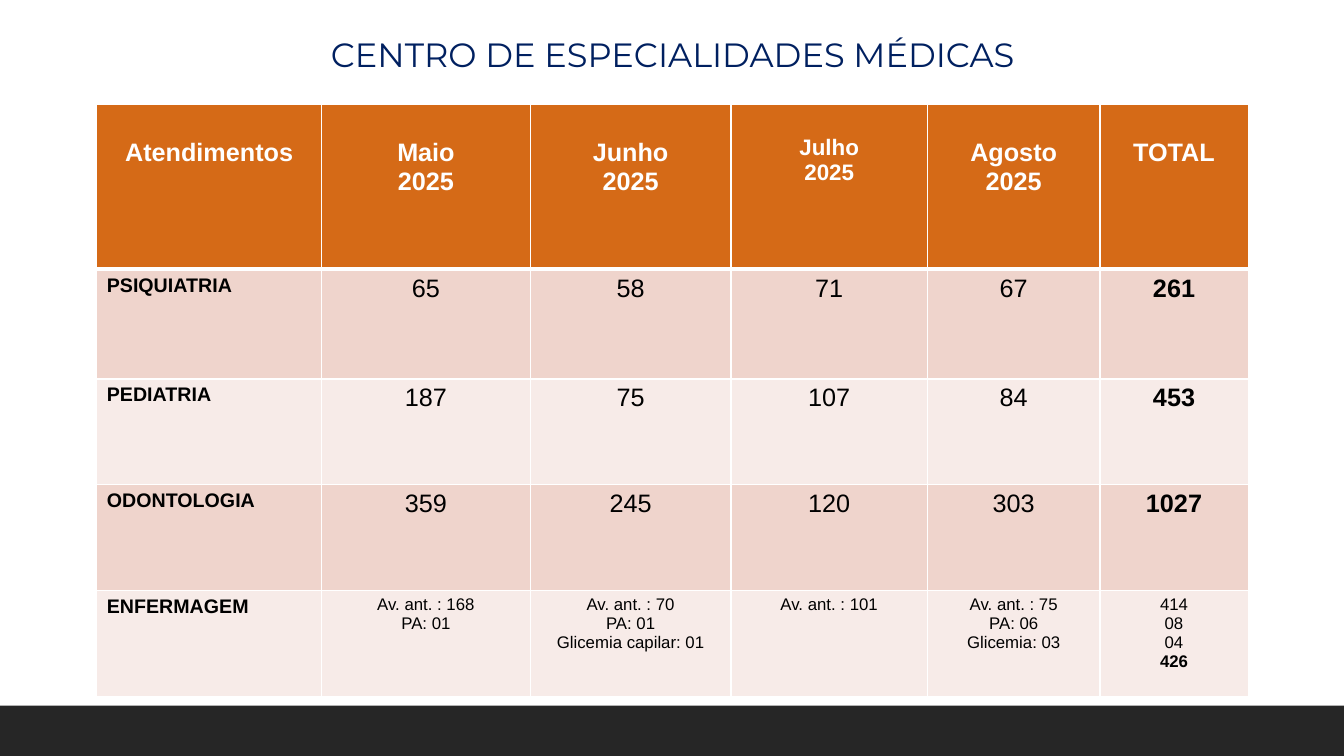
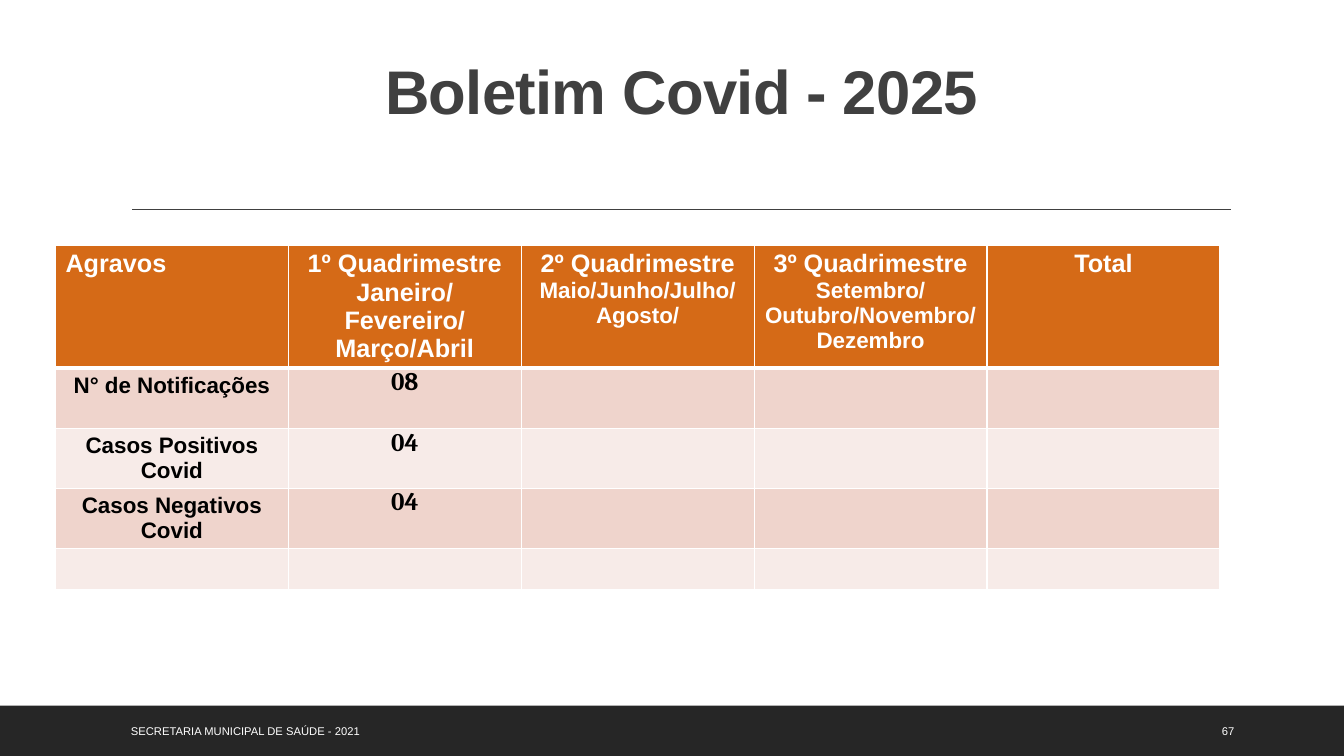
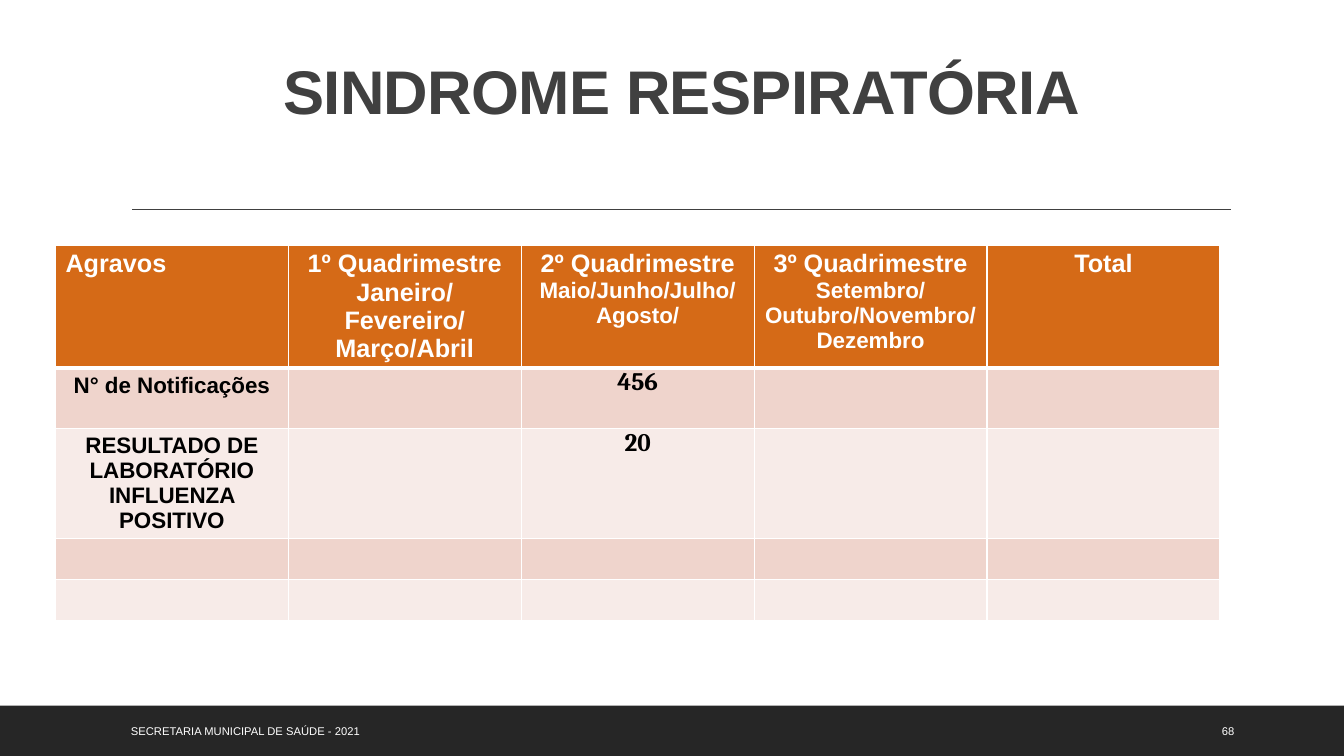
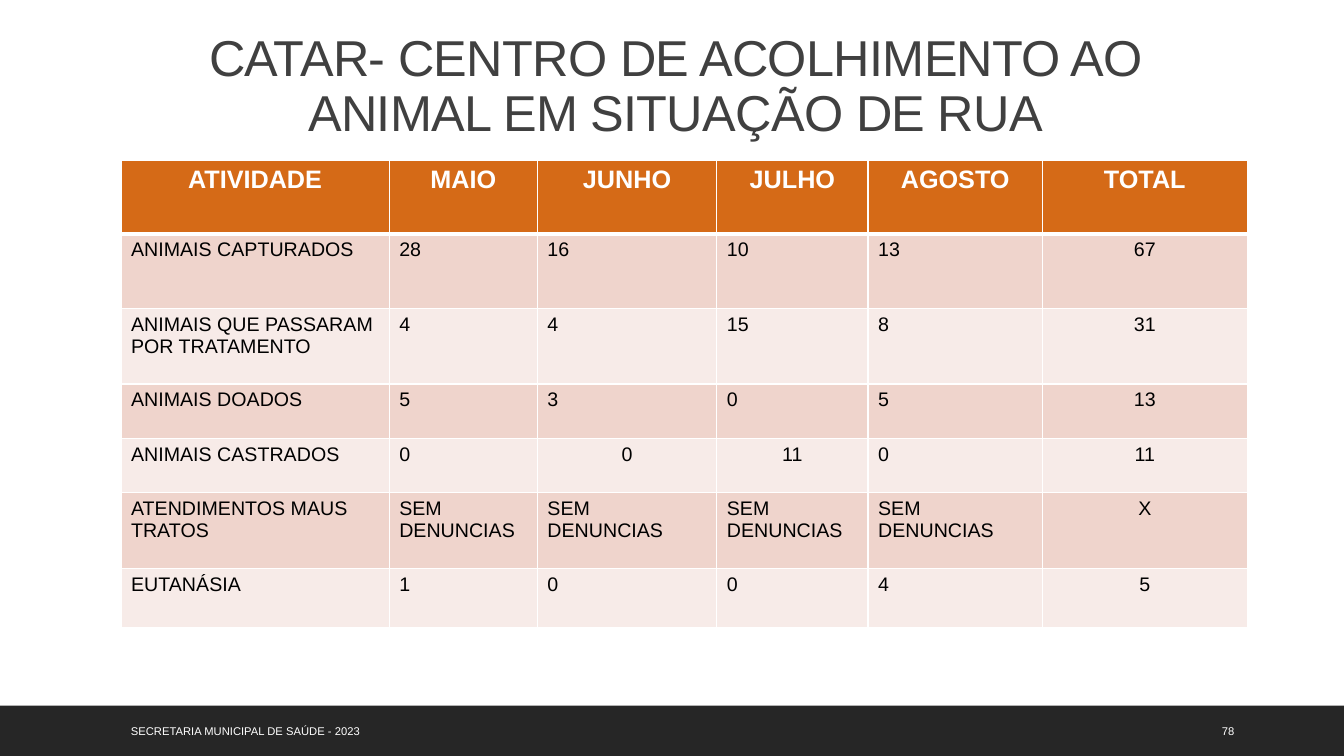
"""Build four health report slides with tables."""
from dataclasses import dataclass

from lxml import etree
from pptx import Presentation
from pptx.dml.color import RGBColor
from pptx.enum.shapes import MSO_CONNECTOR, MSO_SHAPE
from pptx.enum.text import MSO_ANCHOR, MSO_AUTO_SIZE, PP_ALIGN
from pptx.oxml.ns import qn
from pptx.util import Inches, Pt

LEFT, MID = PP_ALIGN.LEFT, PP_ALIGN.CENTER
TOP, HALF, LOW = MSO_ANCHOR.TOP, MSO_ANCHOR.MIDDLE, MSO_ANCHOR.BOTTOM
FIXED = MSO_AUTO_SIZE.NONE
RECT, LINE = MSO_SHAPE.RECTANGLE, MSO_CONNECTOR.STRAIGHT


@dataclass(frozen=True)
class Theme:
    """Hold the colours, fonts and type sizes."""
    white: str = "FFFFFF"
    black: str = "000000"
    band: str = "262626"
    gray: str = "404040"
    navy: str = "002060"
    head: str = "D56A17"
    odd: str = "EFD4CC"
    even: str = "F7EBE8"
    font: str = "Arial"
    serif: str = "Cambria"
    thin: str = "Montserrat"
    huge: int = 44
    big: int = 36
    mid: int = 24
    large: int = 18
    sub: int = 16
    body: int = 14
    note: int = 12
    foot: int = 8


T = Theme()

CLINIC = [
    ["Atendimentos", "Maio\n2025", "Junho\n2025", "Julho\n2025", "Agosto\n2025", "TOTAL"],
    ["PSIQUIATRIA", "65", "58", "71", "67", "261"],
    ["PEDIATRIA", "187", "75", "107", "84", "453"],
    ["ODONTOLOGIA", "359", "245", "120", "303", "1027"],
    ["ENFERMAGEM", "Av. ant. : 168\nPA: 01",
     "Av. ant. : 70\nPA: 01\nGlicemia capilar: 01", "Av. ant. : 101",
     "Av. ant. : 75\nPA: 06\nGlicemia: 03", "414\n08\n04\n426"],
]
TERMS = [
    "Agravos", "1º Quadrimestre\nJaneiro/Fevereiro/Março/Abril",
    "2º Quadrimestre\nMaio/Junho/Julho/Agosto/",
    "3º Quadrimestre\nSetembro/Outubro/Novembro/ Dezembro", "Total",
]
EMPTY = [""] * 5
COVID = [
    TERMS,
    ["N° de Notificações", "08", "", "", ""],
    ["Casos Positivos Covid", "04", "", "", ""],
    ["Casos Negativos Covid", "04", "", "", ""],
    EMPTY,
]
BREATH = [
    TERMS,
    ["N° de Notificações", "", "456", "", ""],
    ["RESULTADO DE LABORATÓRIO INFLUENZA POSITIVO", "", "20", "", ""],
    EMPTY,
    EMPTY,
]
ANIMALS = [
    ["ATIVIDADE", "MAIO", "JUNHO", "JULHO", "AGOSTO", "TOTAL"],
    ["ANIMAIS CAPTURADOS", "28", "16", "10", "13", "67"],
    ["ANIMAIS QUE PASSARAM POR TRATAMENTO", "4", "4", "15", "8", "31"],
    ["ANIMAIS DOADOS", "5", "3", "0", "5", "13"],
    ["ANIMAIS CASTRADOS", "0", "0", "11", "0", "11"],
    ["ATENDIMENTOS MAUS TRATOS"] + ["SEM DENUNCIAS"] * 4 + ["X"],
    ["EUTANÁSIA", "1", "0", "0", "4", "5"],
]


def paint(fill, color):
    """Set a solid fill."""
    fill.solid()
    fill.fore_color.rgb = RGBColor.from_string(color)


def write(frame, text, last=None, **form):
    """Write one paragraph a line; last holds the format of the final one."""
    lines = text.split("\n")
    for i, line in enumerate(lines):
        look = {**form, **(last or {})} if i == len(lines) - 1 else form
        para = frame.paragraphs[0] if i == 0 else frame.add_paragraph()
        para.alignment = look.get("align", LEFT)
        para.line_spacing = look.get("pace", 1.0)
        run = para.add_run()
        run.text = line
        font = run.font
        font.name = look.get("font", T.font)
        font.size = Pt(look.get("size", T.body))
        font.bold = look.get("bold", False)
        font.color.rgb = RGBColor.from_string(look.get("color", T.black))
        if "track" in look:
            run._r.get_or_add_rPr().set("spc", str(look["track"]))


def brand(layout, slide):
    """Draw the band and rule and move them to the layout."""
    band = slide.shapes.add_shape(RECT, 0, Inches(7), Inches(13.33), Inches(0.5))
    band.shadow.inherit = False
    paint(band.fill, T.band)
    band.line.fill.background()
    rule = slide.shapes.add_connector(
        LINE, Inches(1.31), Inches(2.08), Inches(12.21), Inches(2.08))
    rule.line.color.rgb = RGBColor.from_string(T.gray)
    rule.line.width = Pt(1)
    etree.SubElement(rule.element.spPr, qn("a:effectLst"))
    for mark, shape in enumerate((band, rule), 90):
        shape.element.xpath(".//p:cNvPr")[0].set("id", str(mark))
        layout.shapes.element.append(shape.element)


def title(slide, text, box, anchor=LOW, **form):
    """Place and fill the title placeholder."""
    shape = slide.shapes.title
    shape.left, shape.top, shape.width, shape.height = map(Inches, box)
    frame = shape.text_frame
    frame.word_wrap = True
    frame.auto_size = FIXED
    frame.vertical_anchor = anchor
    look = {"color": T.gray, "pace": 0.9, "track": -50, "align": MID}
    write(frame, text, **{**look, **form})


def footer(slide, year, page):
    """Add the footer text and page number."""
    label = f"SECRETARIA MUNICIPAL DE SAÚDE - {year}"
    for text, left, width in ((label, 1.2, 7.46), (str(page), 12.02, 0.85)):
        box = slide.shapes.add_textbox(
            Inches(left), Inches(7.05), Inches(width), Inches(0.4))
        frame = box.text_frame
        frame.word_wrap = True
        frame.vertical_anchor = HALF
        write(frame, text, size=T.foot, color=T.white)


def edge(cell, head):
    """Give a cell white borders, thick under the header."""
    props = cell._tc.get_or_add_tcPr()
    for side in "LRTB":
        width = Pt(3 if head and side == "B" else 1)
        line = etree.SubElement(props, qn(f"a:ln{side}"), w=str(width))
        fill = etree.SubElement(line, qn("a:solidFill"))
        etree.SubElement(fill, qn("a:srgbClr"), val=T.white)


def grid(slide, spot, cols, rows, data, style):
    """Add a table; style gives the format of each cell."""
    left, top = map(Inches, spot)
    table = slide.shapes.add_table(
        len(rows), len(cols), left, top, Inches(sum(cols)), Inches(sum(rows))).table
    table.horz_banding = False
    for col, width in zip(table.columns, cols):
        col.width = Inches(width)
    for r, (line, high) in enumerate(zip(data, rows)):
        table.rows[r].height = Inches(high)
        for c, text in enumerate(line):
            cell = table.cell(r, c)
            edge(cell, r == 0)
            paint(cell.fill, T.head if r == 0 else T.odd if r % 2 else T.even)
            if not text:
                continue
            look = style(r, c)
            cell.margin_top = Inches(look.pop("inset", 0.05))
            if r == 0:
                look = {"size": T.large, "bold": True, "color": T.white,
                        "align": MID, **look}
            write(cell.text_frame, text, **look)


def clinic(r, c):
    """Format the cells of the clinic table."""
    if r == 0:
        return {"size": T.sub, "inset": 0.3} if c == 3 else {"inset": 0.34}
    if c == 0:
        return {"bold": True}
    if r == 4:
        return {"size": T.note, "align": MID, "last": {"bold": c == 5}}
    return {"size": T.large, "align": MID, "bold": c == 5}


def term(r, c):
    """Format the cells of the four-month tables."""
    if r == 0:
        if c == 0:
            return {"align": LEFT}
        return {"last": {"size": T.sub}} if c in (2, 3) else {}
    look = {"align": MID, "bold": True}
    if c == 0:
        return {**look, "size": T.sub}
    return {**look, "size": T.large, "font": T.serif, "inset": 0}


def animal(r, c):
    """Format the cells of the animal table."""
    mid = c == 5 or (r == 4 and c in (2, 3))
    return {"align": MID if mid else LEFT} if r else {}


def report(slide, name, page, rows, data):
    """Fill a slide with a four-month table."""
    title(slide, name, (0.78, 0.31, 11.96, 1.01), size=T.huge, bold=True)
    grid(slide, (0.55, 2.43), [2.31] * 5, rows, data, term)
    footer(slide, 2021, page)


def main():
    """Build and save the deck."""
    deck = Presentation()
    deck.slide_width, deck.slide_height = Inches(13.33), Inches(7.5)
    layout = deck.slide_layouts[5]
    first, covid, breath, last = [deck.slides.add_slide(layout) for _ in range(4)]
    brand(layout, first)

    title(first, "CENTRO DE ESPECIALIDADES MÉDICAS", (1.67, 0.29, 10, 0.6), TOP,
          size=T.mid, font=T.thin, color=T.navy, pace=1.0, track=0)
    grid(first, (0.96, 1.04), [2.23, 2.07, 1.99, 1.95, 1.71, 1.47],
         [1.63, 1.09, 1.05, 1.05, 1.05], CLINIC, clinic)

    report(covid, "Boletim Covid - 2025", 67, [1.21, 0.6, 0.59, 0.59, 0.41], COVID)
    report(breath, "SINDROME RESPIRATÓRIA", 68, [1.21, 0.6, 1.09, 0.41, 0.41], BREATH)

    title(last, "CATAR- CENTRO DE ACOLHIMENTO AO ANIMAL EM SITUAÇÃO DE RUA",
          (1.2, 0.05, 11, 1.41), size=T.big)
    grid(last, (1.2, 1.59), [2.66, 1.47, 1.78, 1.5, 1.73, 2.03],
         [0.73, 0.74, 0.75, 0.54, 0.54, 0.75, 0.59], ANIMALS, animal)
    footer(last, 2023, 78)
    deck.save("out.pptx")


if __name__ == "__main__":
    main()
